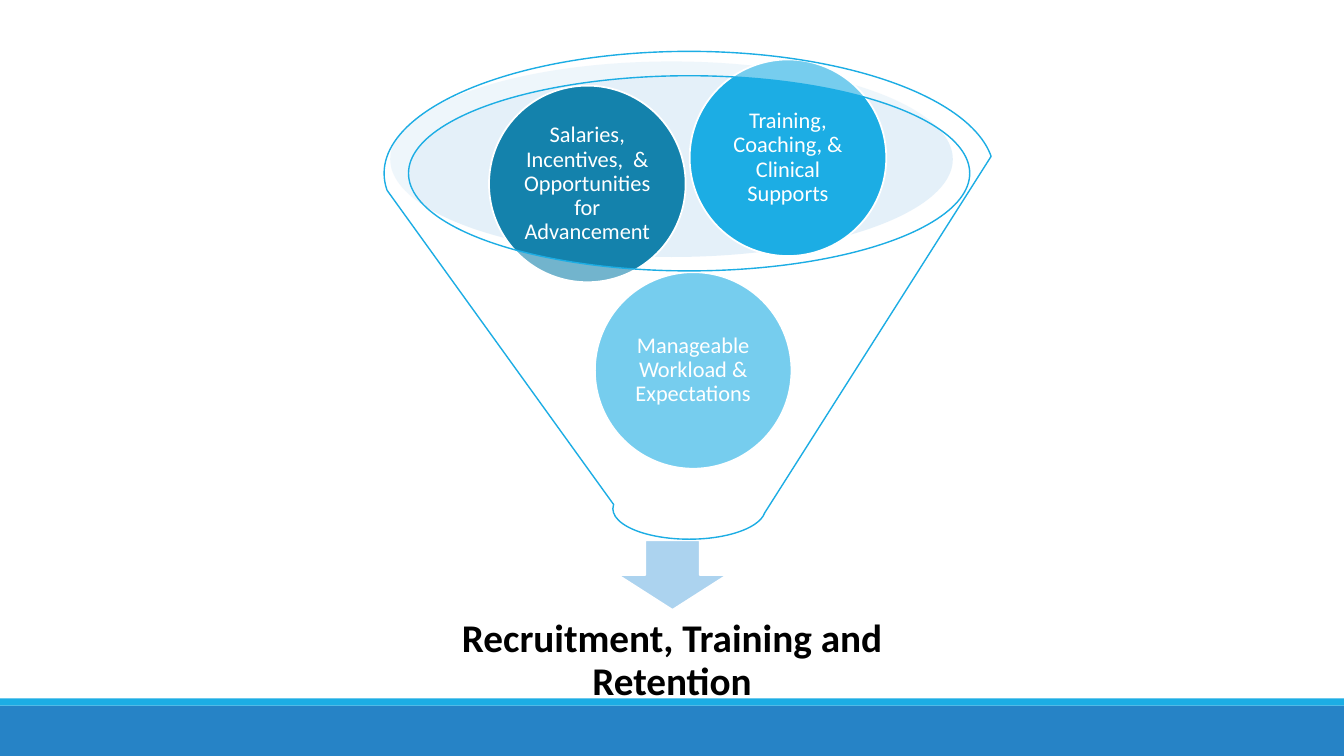
from lxml import etree
from pptx import Presentation
from pptx import util as u
from pptx.dml.color import RGBColor
from pptx.enum import shapes, text
from pptx.oxml.ns import qn

W, H = 13.33, 7.5
COLORS = {
    "blue": "2683C6", "cyan": "1CADE4", "teal": "1482AC", "pale": "BDDBF2",
    "arrow": "ACD3EF", "white": "FFFFFF", "black": "000000",
}
RESULT = "Recruitment, Training and Retention"
DIAMETER = 1.95
FACTORS = [
    ("Manageable Workload & Expectations", 5.9, 2.7, "cyan"),
    ("Salaries, Incentives,  & Opportunities for Advancement", 4.85, 0.85, "teal"),
    ("Training, Coaching, & Clinical Supports", 6.84, 0.59, "cyan"),
]
BAND_TOP, STRIPE = 7, 0.07
KINDS = shapes.MSO_SHAPE


def rgb(name):
    return RGBColor.from_string(COLORS[name])


def draw(s, kind, box, fill, line=None, width=1.25, alpha=None):
    sp = s.shapes.add_shape(kind, *map(u.Inches, box))
    sp.shadow.inherit = False
    sp.fill.solid()
    sp.fill.fore_color.rgb = rgb(fill)
    if alpha:
        color = sp.fill._xPr.find(qn("a:solidFill"))[0]
        etree.SubElement(color, qn("a:alpha")).set("val", str(alpha * 1000))
    if line:
        sp.line.color.rgb = rgb(line)
        sp.line.width = u.Pt(width)
    else:
        sp.line.fill.background()
    return sp


def write(sp, words, size, color, inset, bold=False):
    tf = sp.text_frame
    tf.word_wrap = True
    tf.vertical_anchor = text.MSO_ANCHOR.MIDDLE
    tf.margin_left = tf.margin_right = u.Inches(inset)
    tf.margin_top = tf.margin_bottom = u.Inches(inset)
    p = tf.paragraphs[0]
    p.text = words
    p.alignment = text.PP_ALIGN.CENTER
    p.line_spacing = 0.9
    p.font.name = "Calibri"
    p.font.size = u.Pt(size)
    p.font.bold = bold
    p.font.color.rgb = rgb(color)


def main():
    prs = Presentation()
    prs.slide_width, prs.slide_height = u.Inches(W), u.Inches(H)
    s = prs.slides.add_slide(prs.slide_layouts[6])

    draw(s, KINDS.RECTANGLE, (0, BAND_TOP, W, H - BAND_TOP), "blue")
    draw(s, KINDS.RECTANGLE, (0, BAND_TOP - STRIPE, W, STRIPE), "cyan")
    draw(s, KINDS.OVAL, (3.87, 0.61, 5.58, 1.94), "pale", alpha=40)
    draw(s, KINDS.DOWN_ARROW, (6.13, 5.36, 1.08, 0.69), "arrow", "white")

    result = s.shapes.add_textbox(*map(u.Inches, (4.07, 5.91, 5.19, 1.3)))
    write(result, RESULT, 28, "black", 0.22, bold=True)

    for words, left, top, fill in FACTORS:
        circle = draw(s, KINDS.OVAL, (left, top, DIAMETER, DIAMETER), fill, "white")
        write(circle, words, 16, "white", 0.02)

    draw(s, KINDS.FUNNEL, (3.81, 0.51, 6.05, 4.84), "white", "cyan", 1, alpha=40)
    prs.save("out.pptx")


if __name__ == "__main__":
    main()
